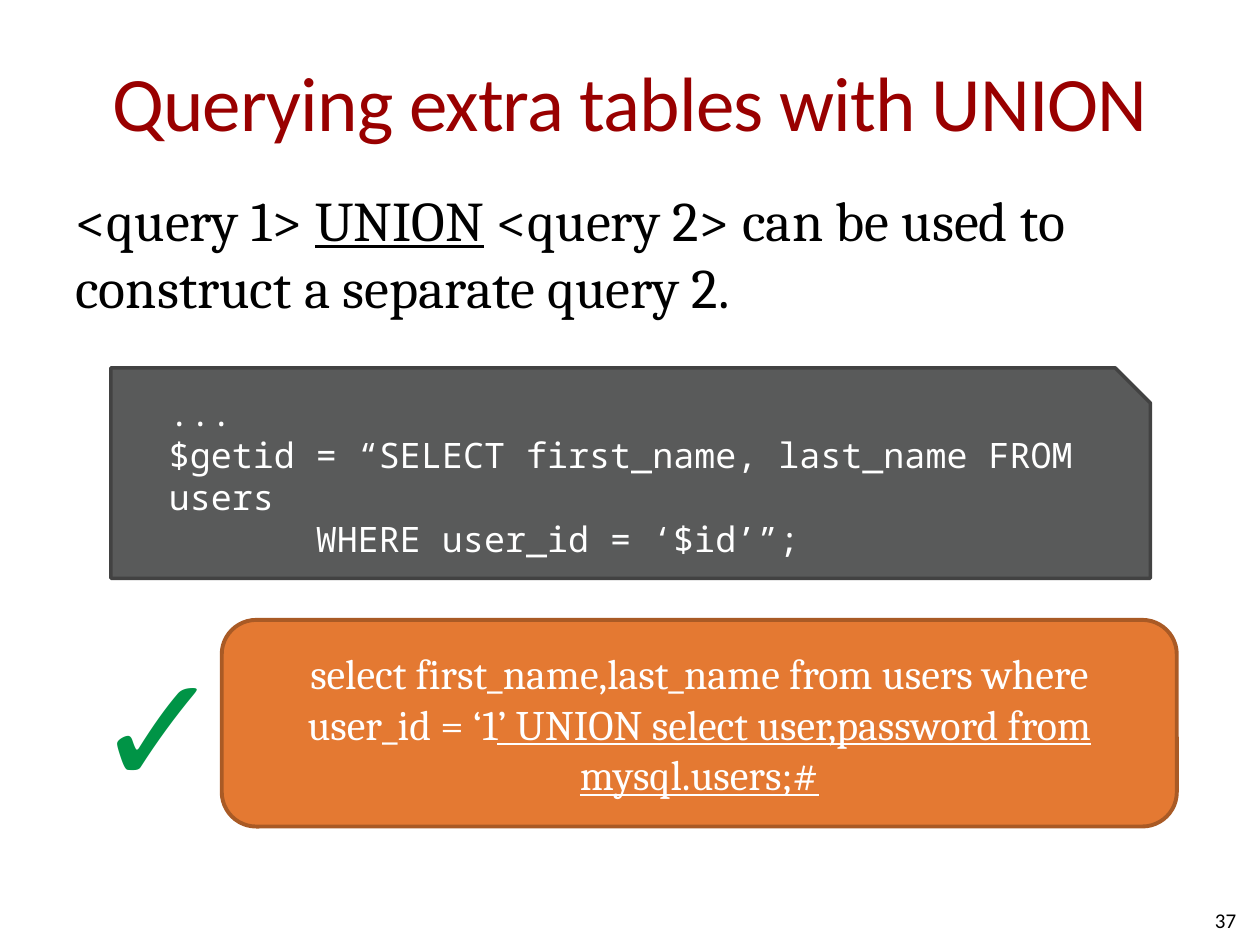
"""Build a slide on querying extra tables with UNION."""
from dataclasses import dataclass
from typing import Optional

from pptx import Presentation
from pptx.dml.color import RGBColor
from pptx.enum.shapes import MSO_SHAPE as Kind
from pptx.enum.text import MSO_ANCHOR as Anchor, PP_ALIGN as Align
from pptx.util import Inches, Pt

RED = RGBColor(0x99, 0x00, 0x00)
BLACK = RGBColor(0x00, 0x00, 0x00)
WHITE = RGBColor(0xFF, 0xFF, 0xFF)
GREY = RGBColor(0x59, 0x5A, 0x5A)
DARK = RGBColor(0x42, 0x42, 0x42)
ORANGE = RGBColor(0xE4, 0x79, 0x32)
BROWN = RGBColor(0xA9, 0x5A, 0x25)
GREEN = RGBColor(0x00, 0x94, 0x46)


@dataclass
class Look:
    kind: Kind
    fill: RGBColor
    line: RGBColor
    width: float


@dataclass
class Box:
    place: tuple[float, float, float, float]
    paras: list[list[str]]
    font: str
    size: float
    color: RGBColor
    align: Align = Align.LEFT
    anchor: Anchor = Anchor.TOP
    look: Optional[Look] = None
    inset: float = 0.1
    wrap: bool = True
    pitch: Optional[float] = None
    track: int = 0


BOXES = [
    Box((0.5, 0.17, 9, 1.25), [["Querying extra tables with UNION"]],
        "Calibri", 44, RED, Align.CENTER, Anchor.MIDDLE, inset=0, track=-50),
    Box((7.58, 7.1, 2.33, 0.4), [["37"]],
        "Calibri", 12, BLACK, Align.RIGHT, Anchor.MIDDLE),
    Box((0.5, 1.42, 9, 5.2),
        [["<query 1> ", "UNION",
          " <query 2> can be used to construct a separate query 2."]],
        "Cambria", 32, BLACK),
    Box((0.88, 2.92, 8.25, 1.67),
        [["..."],
         ["$getid = “SELECT first_name, last_name FROM users \v"
          "\t    WHERE user_id = ‘$id’”;"]],
        "Noto Sans Mono", 20, WHITE, inset=0.46, pitch=24,
        look=Look(Kind.SNIP_1_RECTANGLE, GREY, DARK, 2)),
    Box((1.76, 4.92, 7.58, 1.64),
        [["select first_name,last_name from users where user_id = ‘1",
          "’ UNION select user,password from mysql.users;#"]],
        "Cambria", 24, WHITE, Align.CENTER, Anchor.MIDDLE,
        Look(Kind.ROUNDED_RECTANGLE, ORANGE, BROWN, 2.25)),
    Box((0.65, 4.96, 1.13, 1.58), [["✓"]], "Arial", 88, GREEN, wrap=False),
]


def add_base(slide, box: Box):
    """Add the shape or text box that holds the text."""
    place = [Inches(n) for n in box.place]
    look = box.look
    if look is None:
        return slide.shapes.add_textbox(*place)
    shape = slide.shapes.add_shape(look.kind, *place)
    shape.shadow.inherit = False
    shape.fill.solid()
    shape.fill.fore_color.rgb = look.fill
    shape.line.color.rgb = look.line
    shape.line.width = Pt(look.width)
    return shape


def draw_box(slide, box: Box) -> None:
    """Draw one box; every second part of a paragraph is underlined."""
    frame = add_base(slide, box).text_frame
    frame.word_wrap = box.wrap
    frame.vertical_anchor = box.anchor
    frame.margin_left = Inches(box.inset)
    frame.margin_right = Inches(min(box.inset, 0.1))
    for i, parts in enumerate(box.paras):
        para = frame.add_paragraph() if i else frame.paragraphs[0]
        para.alignment = box.align
        if box.pitch:
            para.line_spacing = Pt(box.pitch)
        para.text = parts[0]
        for j, part in enumerate(parts[1:], 1):
            run = para.add_run()
            run.text = part
            run.font.underline = j % 2 == 1
        for run in para.runs:
            run.font.name = box.font
            run.font.size = Pt(box.size)
            run.font.color.rgb = box.color
            if box.track:
                run.font._element.set("spc", str(box.track))


def main() -> None:
    """Build and save the deck."""
    deck = Presentation()
    deck.slide_width, deck.slide_height = Inches(10), Inches(7.5)
    slide = deck.slides.add_slide(deck.slide_layouts[6])
    for box in BOXES:
        draw_box(slide, box)
    deck.save("out.pptx")


if __name__ == "__main__":
    main()
